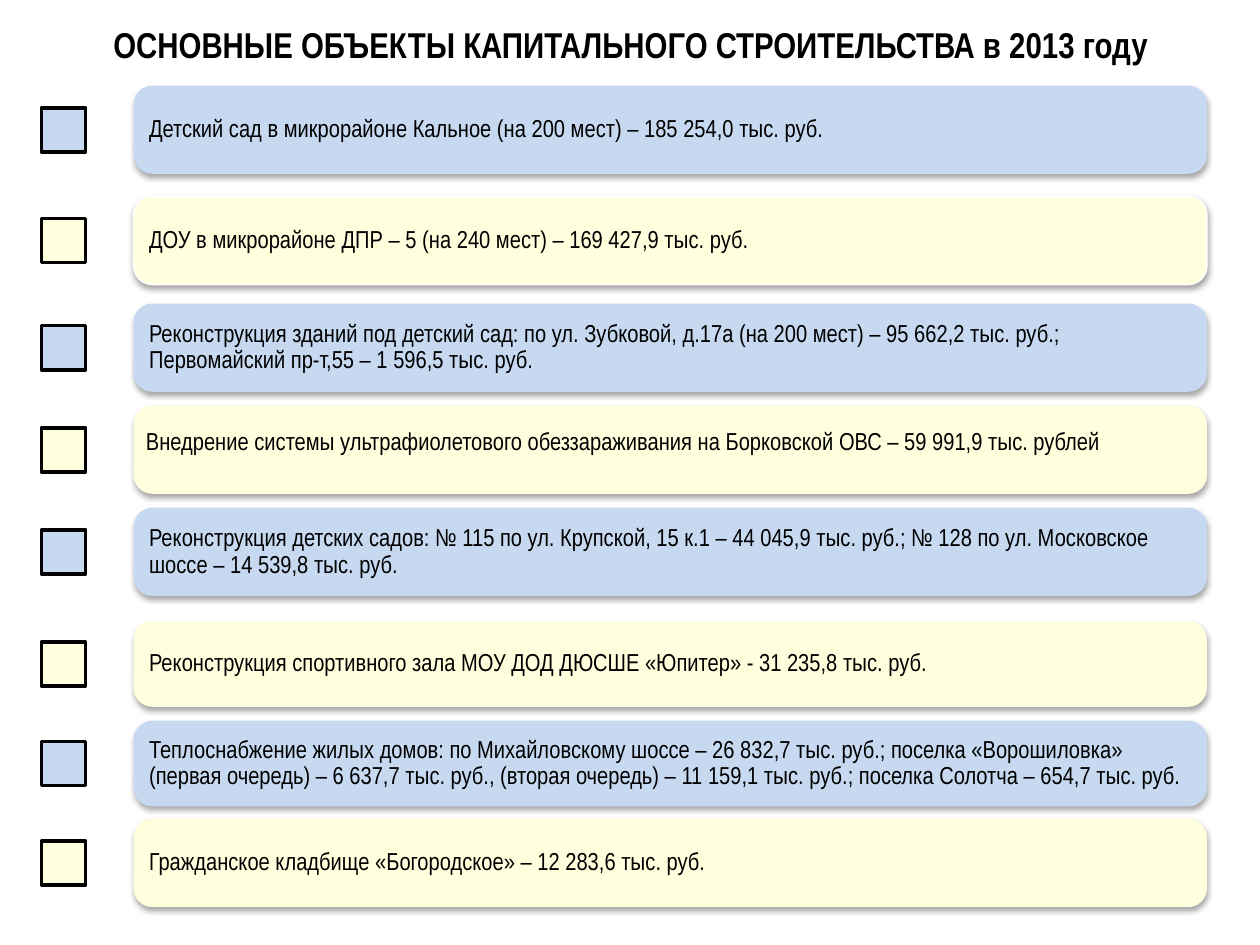
from lxml import etree
from pptx import Presentation
from pptx import util as u
from pptx.dml.color import RGBColor
from pptx.enum import shapes, text
from pptx.oxml import ns

BLUE = RGBColor(0xC6, 0xD9, 0xF1)
CREAM = RGBColor(0xFF, 0xFF, 0xDD)
WHITE = RGBColor(0xFF, 0xFF, 0xFF)
BLACK = RGBColor(0, 0, 0)
SHADOW = (
    f'<a:effectLst {ns.nsdecls("a")}><a:outerShdw blurRad="39370" dist="22860" '
    'dir="5400000" rotWithShape="0"><a:srgbClr val="000000">'
    '<a:alpha val="35000"/></a:srgbClr></a:outerShdw></a:effectLst>'
)

# Columns and row heights, in inches
MARKER_LEFT, MARKER_SIDE = 0.33, 0.35
BAR_LEFT, BAR_WIDTH = 1.06, 8.52
CORNER = 0.15
TALL, SHORT = 0.7, 0.68

# Row top, row height, wording
ROWS = [
    (0.68, TALL, "Детский сад в микрорайоне Кальное (на 200 мест) – 185 254,0 тыс. руб."),
    (1.56, TALL, "ДОУ в микрорайоне ДПР – 5 (на 240 мест) – 169 427,9 тыс. руб."),
    (2.41, TALL, "Реконструкция зданий под детский сад: по ул. Зубковой, д.17а (на 200 мест) – "
                 "95 662,2 тыс. руб.; Первомайский пр-т,55 – 1 596,5 тыс. руб."),
    (3.22, TALL, None),  # its wording sits in a text box of its own
    (4.03, TALL, "Реконструкция детских садов: № 115 по ул. Крупской, 15 к.1 – 44 045,9 тыс. руб.; "
                 "№ 128 по ул. Московское шоссе – 14 539,8 тыс. руб."),
    (4.93, SHORT, "Реконструкция спортивного зала МОУ ДОД ДЮСШЕ «Юпитер» - 31 235,8 тыс. руб."),
    (5.72, SHORT, "Теплоснабжение жилых домов: по Михайловскому шоссе – 26 832,7 тыс. руб.; "
                  "поселка «Ворошиловка» (первая очередь) – 6 637,7 тыс. руб., (вторая очередь) – "
                  "11 159,1 тыс. руб.; поселка Солотча – 654,7 тыс. руб."),
    (6.5, TALL, "Гражданское кладбище «Богородское» – 12 283,6 тыс. руб."),
]


def write(box, wording, size=14, bold=False, align=text.PP_ALIGN.LEFT,
          anchor=text.MSO_ANCHOR.TOP, inset=0.1, spacing=0.9):
    frame = box.text_frame
    frame.word_wrap = True
    frame.vertical_anchor = anchor
    frame.margin_left = frame.margin_right = u.Inches(inset)
    para = frame.paragraphs[0]
    para.alignment = align
    para.line_spacing = spacing
    span = para.add_run()
    span.text = wording
    span.font.name = "Arial Narrow"
    span.font.size = u.Pt(size)
    span.font.bold = bold
    span.font.color.rgb = BLACK


def add_block(kind, left, top, width, height, fill):
    block = page.shapes.add_shape(kind, *map(u.Inches, (left, top, width, height)))
    block.shadow.inherit = False
    block.fill.solid()
    block.fill.fore_color.rgb = fill
    return block


deck = Presentation()
deck.slide_width, deck.slide_height = u.Inches(10), u.Inches(7.5)
page = deck.slides.add_slide(deck.slide_layouts[6])

# Title
title = page.shapes.add_textbox(*map(u.Inches, (0.51, 0.13, 9, 0.69)))
write(title, "ОСНОВНЫЕ ОБЪЕКТЫ КАПИТАЛЬНОГО СТРОИТЕЛЬСТВА в 2013 году",
      size=20.5, bold=True, align=text.PP_ALIGN.CENTER, spacing=1.0)

# Construction projects: a shadowed bar and a square marker centred on it
for index, (top, height, wording) in enumerate(ROWS):
    colour = CREAM if index % 2 else BLUE

    bar = add_block(shapes.MSO_SHAPE.ROUNDED_RECTANGLE, BAR_LEFT, top, BAR_WIDTH, height, colour)
    bar.adjustments[0] = CORNER / height
    if index == 1:
        bar.line.color.rgb = WHITE
        bar.line.width = u.Pt(0.75)
    else:
        bar.line.fill.background()
    properties = bar.element.spPr
    properties.replace(properties.find(ns.qn("a:effectLst")), etree.fromstring(SHADOW))
    if wording:
        write(bar, wording, anchor=text.MSO_ANCHOR.MIDDLE, inset=0.08)

    marker = add_block(shapes.MSO_SHAPE.RECTANGLE, MARKER_LEFT,
                       top + (height - MARKER_SIDE) / 2, MARKER_SIDE, MARKER_SIDE, colour)
    marker.line.color.rgb = BLACK
    marker.line.width = u.Pt(2)

# Wording over the fourth bar
water = page.shapes.add_textbox(*map(u.Inches, (BAR_LEFT, 3.36, BAR_WIDTH, 0.31)))
write(water, "Внедрение системы ультрафиолетового обеззараживания на Борковской ОВС – "
             "59 991,9 тыс. рублей")

deck.save("out.pptx")
